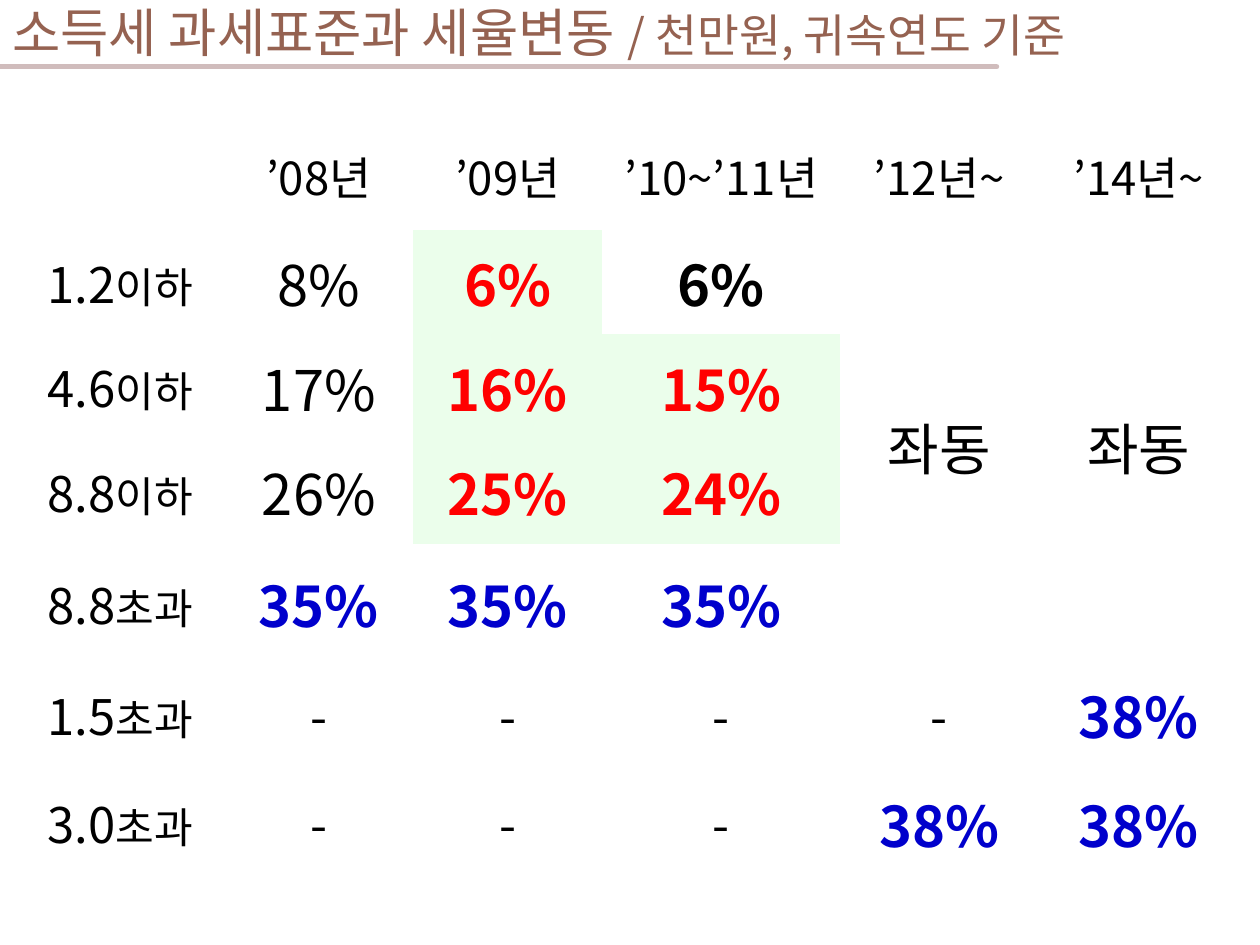
"""Build the slide on income tax brackets and rate changes."""
from dataclasses import dataclass

from lxml.etree import SubElement
from pptx import Presentation
from pptx.dml.color import RGBColor
from pptx.enum.shapes import MSO_CONNECTOR as Connector
from pptx.enum.text import MSO_ANCHOR as Anchor, PP_ALIGN as Align
from pptx.oxml.ns import qn
from pptx.util import Pt

FONT = "Noto Sans CJK KR"
NO_GRID_STYLE = "{2D5ABB26-0587-4C30-8999-92F81FD0307C}"
BLACK = RGBColor(0x00, 0x00, 0x00)
RED = RGBColor(0xFF, 0x00, 0x00)
BLUE = RGBColor(0x00, 0x00, 0xCC)
BROWN = RGBColor(0x95, 0x62, 0x51)
ROSE = RGBColor(0xD0, 0xBC, 0xBC)
MINT = RGBColor(0xEB, 0xFE, 0xEB)


@dataclass(frozen=True)
class Look:
    size: float
    color: RGBColor = BLACK
    bold: bool = False
    fill: RGBColor | None = None
    spacing: float = 1.0


HEADER = Look(26, spacing=0.9)
LABEL = Look(28)
RATE = Look(32)
KEPT = Look(32, bold=True)
CUT = Look(32, RED, True, MINT)
TOP = Look(32, BLUE, True)
DASH = Look(28)

YEARS = ["’08년", "’09년", "’10~’11년", "’12년~", "’14년~"]
NONE = ("-", DASH)
TOP_35 = ("35%", TOP)
TOP_38 = ("38%", TOP)
SAME = ("좌동", RATE)
BRACKETS = [
    ("1.2", "이하", [("8%", RATE), ("6%", CUT), ("6%", KEPT), SAME, SAME]),
    ("4.6", "이하", [("17%", RATE), ("16%", CUT), ("15%", CUT)]),
    ("8.8", "이하", [("26%", RATE), ("25%", CUT), ("24%", CUT)]),
    ("8.8", "초과", [TOP_35] * 3),
    ("1.5", "초과", [NONE] * 4 + [TOP_38]),
    ("3.0", "초과", [NONE] * 3 + [TOP_38] * 2),
]
COLUMN_WIDTHS = [118.8, 108, 108, 136, 113, 115.2]
ROW_HEIGHTS = [59.8, 59.8, 59.8, 59.8, 67.7, 59.8, 64]


class SlideBuilder:
    """Hold the font and the current slide, and draw each kind of element."""

    def __init__(self, slide, font_name):
        self.slide = slide
        self.font_name = font_name

    def set_text(self, paragraph, parts, color, bold=False):
        """Set (text, size) parts in one colour and weight."""
        font = paragraph.font
        font.name = self.font_name
        font.color.rgb = color
        font.bold = bold
        SubElement(font._element, qn("a:ea"), typeface=self.font_name)
        sizes = {size for _, size in parts}
        if len(sizes) == 1:
            font.size = Pt(sizes.pop())
        for text, size in parts:
            run = paragraph.add_run()
            run.text = text
            if len(parts) > 1:
                run.font.size = Pt(size)

    def line(self, start, end, color, width):
        """Draw a straight line with round ends."""
        points = [Pt(value) for value in (*start, *end)]
        connector = self.slide.shapes.add_connector(Connector.STRAIGHT, *points)
        connector.line.color.rgb = color
        connector.line.width = Pt(width)
        connector.line._get_or_add_ln().set("cap", "rnd")
        SubElement(connector._element.spPr, qn("a:effectLst"))

    def title(self, box, parts, color):
        """Add a single-line heading, centred vertically."""
        shape = self.slide.shapes.add_textbox(*[Pt(value) for value in box])
        frame = shape.text_frame
        frame.word_wrap = True
        frame.vertical_anchor = Anchor.MIDDLE
        self.set_text(frame.paragraphs[0], parts, color)

    def table(self, left, top, widths, heights):
        """Add an unstyled table with transparent cells."""
        frame = self.slide.shapes.add_table(
            len(heights), len(widths), Pt(left), Pt(top), Pt(sum(widths)), Pt(sum(heights)))
        table = frame.table
        table.first_row = table.horz_banding = False
        table._tbl.tblPr.find(qn("a:tableStyleId")).text = NO_GRID_STYLE
        for column, width in zip(table.columns, widths):
            column.width = Pt(width)
        for row, height in zip(table.rows, heights):
            row.height = Pt(height)
        for cell in table.iter_cells():
            cell.fill.background()
        return table

    def cell(self, cell, parts, look):
        """Fill one table cell with centred text."""
        cell.margin_left = cell.margin_right = Pt(1.4)
        cell.margin_top = cell.margin_bottom = Pt(1.4)
        cell.vertical_anchor = Anchor.MIDDLE
        if look.fill is not None:
            cell.fill.solid()
            cell.fill.fore_color.rgb = look.fill
        paragraph = cell.text_frame.paragraphs[0]
        paragraph.alignment = Align.CENTER
        paragraph.line_spacing = look.spacing
        self.set_text(paragraph, parts, look.color, look.bold)


def main():
    """Build and save the presentation."""
    presentation = Presentation()
    presentation.slide_width, presentation.slide_height = Pt(720), Pt(540)
    slide = presentation.slides.add_slide(presentation.slide_layouts[6])
    builder = SlideBuilder(slide, FONT)

    builder.line((0, 38.2), (569.5, 38.2), ROSE, 3)
    builder.title((0, -0.7, 720, 37.4),
                  [("소득세 과세표준과 세율변동 ", 30), ("/ 천만원, 귀속연도 기준", 26)], BROWN)

    table = builder.table(9.4, 71.5, COLUMN_WIDTHS, ROW_HEIGHTS)
    for column, year in enumerate(YEARS, start=1):
        builder.cell(table.cell(0, column), [(year, HEADER.size)], HEADER)
    for row, (limit, side, rates) in enumerate(BRACKETS, start=1):
        builder.cell(table.cell(row, 0), [(limit, LABEL.size), (side, 24)], LABEL)
        for column, (text, look) in enumerate(rates, start=1):
            builder.cell(table.cell(row, column), [(text, look.size)], look)
    for column in (4, 5):
        table.cell(1, column).merge(table.cell(4, column))

    presentation.save("out.pptx")


if __name__ == "__main__":
    main()
